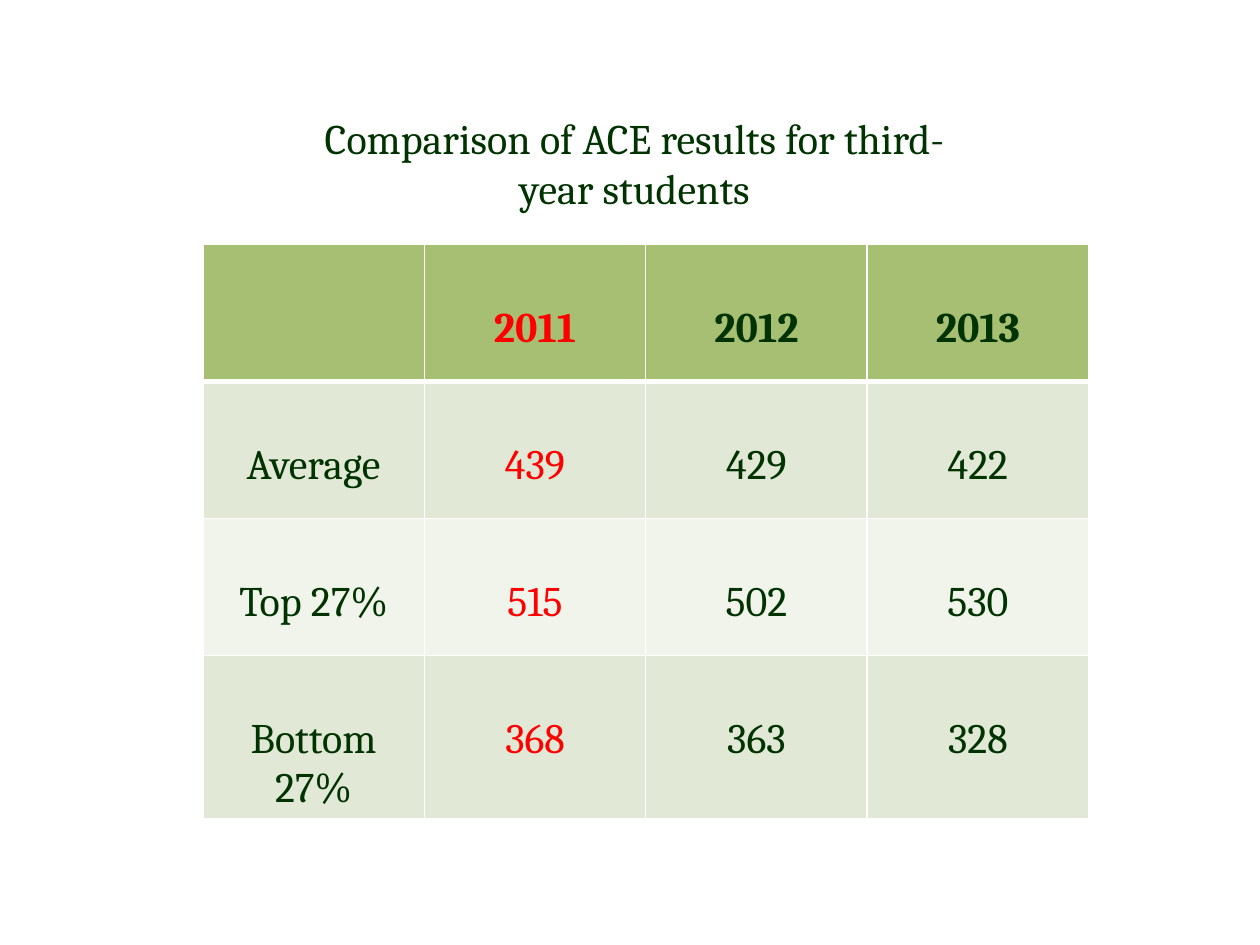
"""Build a slide with a table comparing ACE results over three years."""
from dataclasses import dataclass

from lxml import etree
from pptx import Presentation
from pptx.dml.color import RGBColor
from pptx.enum import text
from pptx.oxml.ns import qn
from pptx.util import Inches, Pt


@dataclass(frozen=True)
class Theme:
    """Colours, font and type size of the slide."""
    font: str = "Cambria"
    size: int = 24
    ink: str = "003300"
    accent: str = "FF0000"
    header: str = "A6BF73"
    bands: tuple[str, str] = ("E1E8D5", "F1F4EB")
    border: str = "FFFFFF"


@dataclass(frozen=True)
class Row:
    """A table row: its label and one value per year."""
    label: str
    values: tuple[str, ...]


THEME = Theme()
ROWS = (
    Row("", ("2011", "2012", "2013")),
    Row("Average", ("439", "429", "422")),
    Row("Top 27%", ("515", "502", "530")),
    Row("Bottom 27%", ("368", "363", "328")),
)


def write(tf, content: str, color: str, bold: bool = False) -> None:
    """Set centred text in the theme font."""
    tf.text = content
    p = tf.paragraphs[0]
    p.alignment = text.PP_ALIGN.CENTER
    for r in p.runs:
        r.font.name = THEME.font
        r.font.size = Pt(THEME.size)
        r.font.bold = bold
        r.font.color.rgb = RGBColor.from_string(color)


def add_border(cell, side: str, width: float) -> None:
    """Add a solid border to one side of a cell."""
    ln = etree.SubElement(cell._tc.get_or_add_tcPr(), qn(f"a:ln{side}"), w=str(Pt(width)))
    fill = etree.SubElement(ln, qn("a:solidFill"))
    etree.SubElement(fill, qn("a:srgbClr"), val=THEME.border)


def format_cell(cell, content: str, row: int, col: int) -> None:
    """Write a cell and give it borders and a fill."""
    header = row == 0
    write(cell.text_frame, content, THEME.accent if col == 1 else THEME.ink, header)
    cell.margin_top = Inches(0.48)
    for side in "LRTB":
        thick = (header and side == "B") or (row == 1 and side == "T")
        add_border(cell, side, 3 if thick else 1)
    cell.fill.solid()
    color = THEME.header if header else THEME.bands[(row - 1) % 2]
    cell.fill.fore_color.rgb = RGBColor.from_string(color)


def add_title(s, content: str) -> None:
    """Place and format the slide title."""
    sp = s.shapes.title
    sp.left, sp.top, sp.width, sp.height = map(Inches, (2.32, 0.84, 5.43, 0.91))
    tf = sp.text_frame
    tf.word_wrap = True
    tf.auto_size = text.MSO_AUTO_SIZE.NONE
    tf.vertical_anchor = text.MSO_ANCHOR.TOP
    write(tf, content, THEME.ink)


def add_results(s, rows: tuple[Row, ...]) -> None:
    """Add the results table with equal rows and columns."""
    n_cols = len(rows[0].values) + 1
    table = s.shapes.add_table(len(rows), n_cols, Inches(1.61), Inches(1.94),
                               Inches(7.03), Inches(4.35)).table
    for i, row in enumerate(rows):
        for j, content in enumerate((row.label, *row.values)):
            format_cell(table.cell(i, j), content, i, j)


def main() -> None:
    """Build and save the presentation."""
    prs = Presentation()
    prs.slide_width, prs.slide_height = Inches(10), Inches(7.5)
    s = prs.slides.add_slide(prs.slide_layouts[5])
    add_title(s, "Comparison of ACE results for third-year students")
    add_results(s, ROWS)
    prs.save("out.pptx")


if __name__ == "__main__":
    main()
